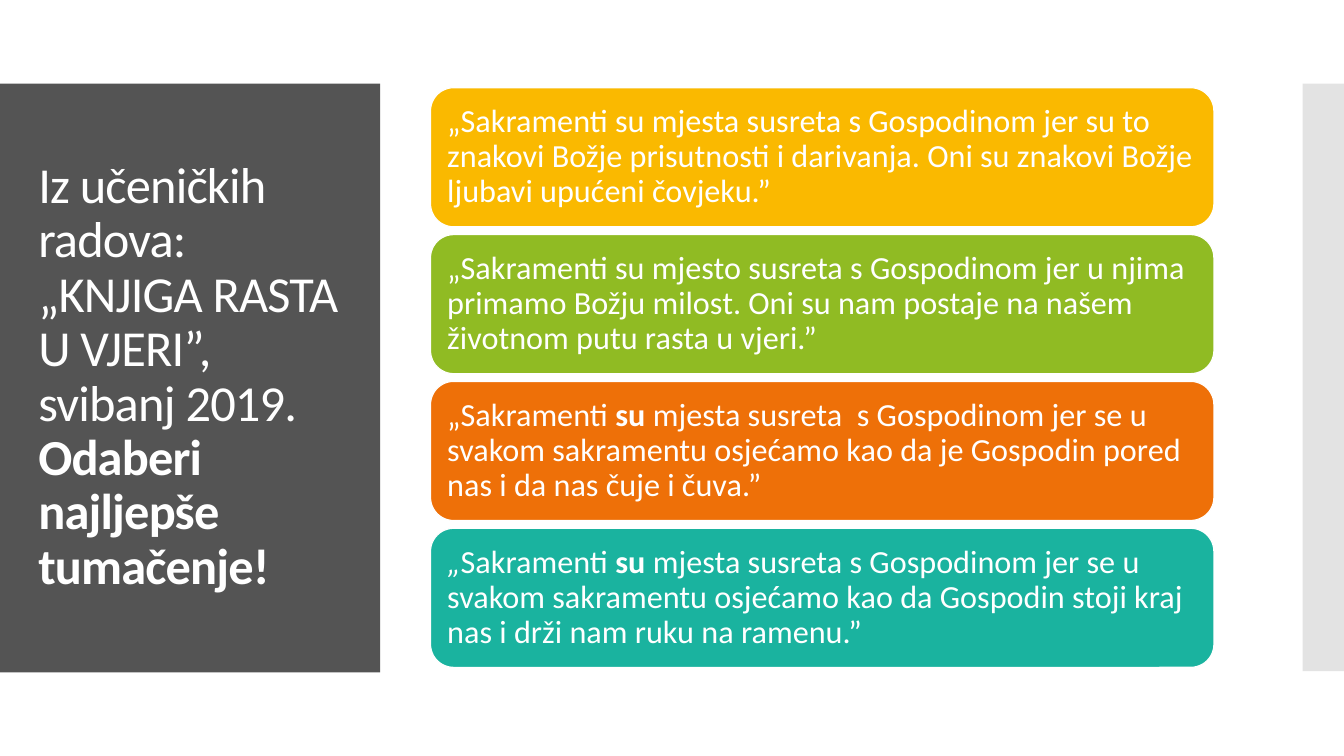
import pptx
import pptx.dml.color
import pptx.enum.shapes
import pptx.enum.text
import pptx.oxml.ns
import pptx.util
from lxml import etree
from pptx.util import Inches

FONT = "Calibri"
WHITE = "FFFFFF"
SHAPES = pptx.enum.shapes.MSO_SHAPE

# Each quote: fill colour, then spans of (text, style)
QUOTES = [
    ("FAB900", [("„Sakramenti su mjesta susreta s Gospodinom jer su to znakovi Božje "
                 "prisutnosti i darivanja. Oni su znakovi Božje ljubavi upućeni čovjeku.”", "")]),
    ("90BB23", [("„Sakramenti su mjesto susreta s Gospodinom jer u njima primamo Božju "
                 "milost. Oni su nam postaje na našem životnom putu rasta u vjeri.”", "")]),
    ("EE7008", [("„Sakramenti ", ""), ("su", "bold"),
                (" mjesta susreta  s Gospodinom jer se u svakom sakramentu osjećamo kao "
                 "da je Gospodin pored nas i da nas čuje i čuva.”", "")]),
    ("1AB39F", [("„", "italic"), ("Sakramenti ", ""), ("su", "bold"),
                (" mjesta susreta s Gospodinom jer se u svakom sakramentu osjećamo kao "
                 "da Gospodin stoji kraj nas i drži nam ruku na ramenu.”", "")]),
]


def rgb(value):
    return pptx.dml.color.RGBColor.from_string(value)


def format_span(span, size, bold=False, italic=False):
    span.font.name = FONT
    span.font.size = pptx.util.Pt(size)
    span.font.color.rgb = rgb(WHITE)
    span.font.bold = bold
    span.font.italic = italic


def format_frame(frame):
    frame.word_wrap = True
    frame.auto_size = pptx.enum.text.MSO_AUTO_SIZE.NONE
    frame.vertical_anchor = pptx.enum.text.MSO_ANCHOR.MIDDLE
    para = frame.paragraphs[0]
    para.alignment = pptx.enum.text.PP_ALIGN.LEFT
    para.line_spacing = 0.9
    return para


def add_block(page, kind, left, top, width, height, color, opacity=100):
    """Add a filled shape without outline or shadow."""
    block = page.shapes.add_shape(
        kind, Inches(left), Inches(top), Inches(width), Inches(height))
    block.shadow.inherit = False
    block.fill.solid()
    block.fill.fore_color.rgb = rgb(color)
    block.line.fill.background()
    if opacity < 100:
        tint = block.fill._xPr.find(".//" + pptx.oxml.ns.qn("a:srgbClr"))
        etree.SubElement(tint, pptx.oxml.ns.qn("a:alpha"), val=str(opacity * 1000))
    return block


def add_quote(page, top, color, spans):
    card = add_block(page, SHAPES.ROUNDED_RECTANGLE, 4.27, top, 7.77, 1.38, color)
    card.line.color.rgb = rgb(WHITE)
    card.line.width = pptx.util.Pt(0.85)
    frame = card.text_frame
    frame.margin_left = frame.margin_right = Inches(0.1)
    frame.margin_top = frame.margin_bottom = Inches(0.1)
    para = format_frame(frame)
    for text, style in spans:
        span = para.add_run()
        span.text = text
        format_span(span, 23, style == "bold", style == "italic")


def place_title(page, panel):
    """Fill the title placeholder and lift it above the panel."""
    title = page.shapes.title
    title.left, title.top = Inches(0.28), Inches(1.23)
    title.width, title.height = Inches(3.22), Inches(5.03)
    para = format_frame(title.text_frame)
    para.text = ("Iz učeničkih radova: „KNJIGA RASTA U VJERI”, svibanj 2019.\v"
                 "Odaberi najljepše tumačenje!")
    for span, bold in zip(para.runs, (False, True)):
        format_span(span, 36, bold)
        span.font._element.set("spc", "-60")
    panel.element.addnext(title.element)


def main():
    deck = pptx.Presentation()
    deck.slide_width, deck.slide_height = Inches(13.33), Inches(7.5)
    page = deck.slides.add_slide(deck.slide_layouts.get_by_name("Title Only"))

    add_block(page, SHAPES.RECTANGLE, 12.92, 0.83, 0.41, 5.83, "C8C8C8", opacity=50)
    panel = add_block(page, SHAPES.RECTANGLE, 0, 0.83, 3.77, 5.84, "545454")
    place_title(page, panel)
    for row, (color, spans) in enumerate(QUOTES):
        add_quote(page, 0.87 + row * 1.457, color, spans)

    deck.save("out.pptx")


if __name__ == "__main__":
    main()
